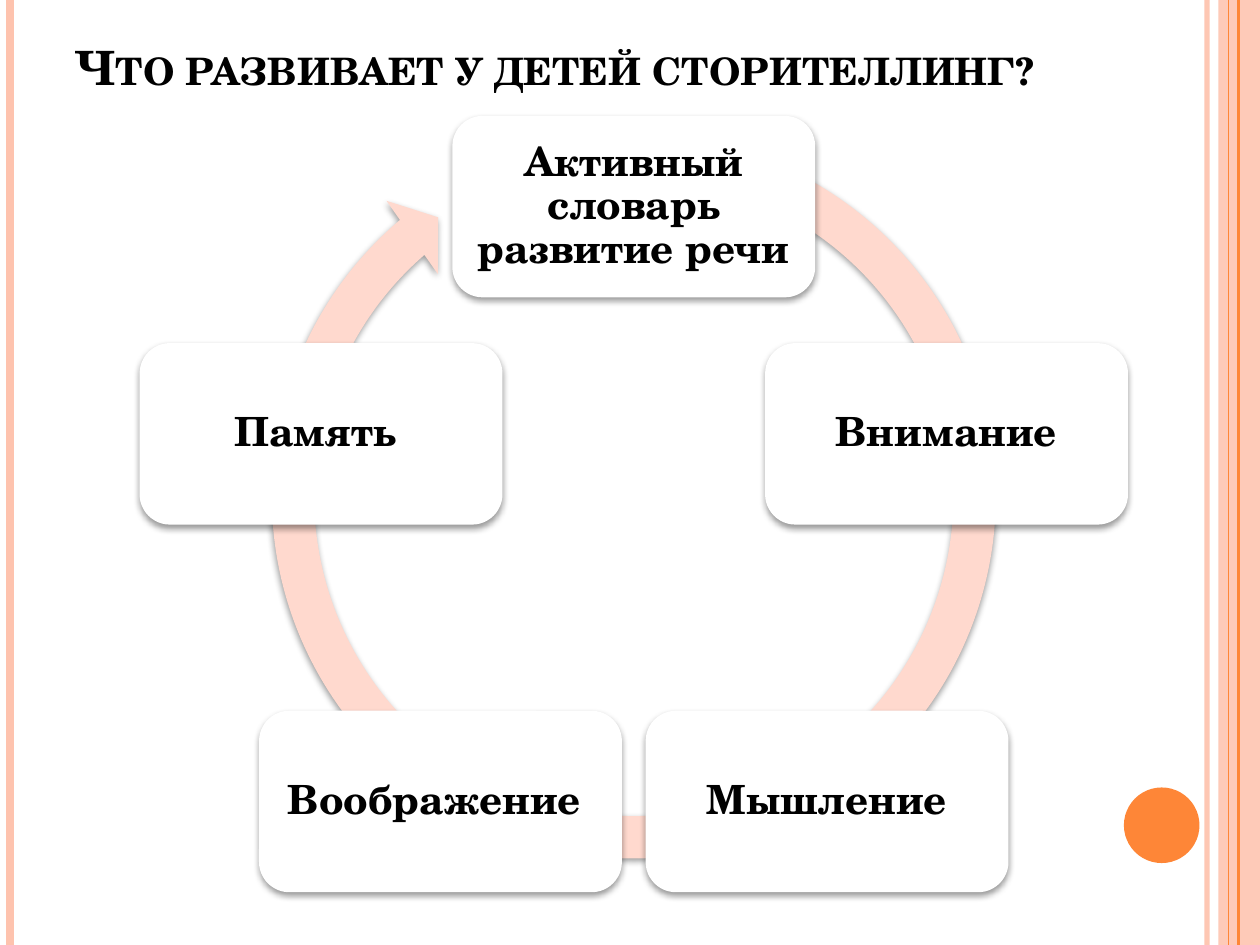
from dataclasses import dataclass
from math import cos, radians, sin

from lxml.etree import SubElement
from pptx import Presentation
from pptx.dml.color import RGBColor
from pptx.enum.shapes import MSO_CONNECTOR as Connector, MSO_SHAPE as Shape
from pptx.enum.text import MSO_ANCHOR as Anchor, PP_ALIGN as Align
from pptx.oxml.ns import qn
from pptx.util import Inches, Pt

FONT = "TeX Gyre Schola"
BLACK, WHITE = "000000", "FFFFFF"
ORANGE, PEACH, PALE_PEACH = "FE8637", "FEC3AE", "FFD9CE"

CENTER_X, CENTER_Y, RADIUS = 5.03, 4.25, 2.61
CARD_WIDTH, CARD_HEIGHT = 2.88, 1.44
ARROW_SIZE = 6.12
ARROW_ADJUSTMENTS = (0.055, 3.307, 137.671, 173.913, 0.058)


@dataclass
class Stripe:
    x: float
    color: str
    weight: float
    opacity: int = 100


STRIPES = [
    Stripe(9.58, PEACH, 3, 93),
    Stripe(0.08, PEACH, 4.5),
    Stripe(9.83, ORANGE, 1.5),
    Stripe(9.75, ORANGE, 0.75),
]
# Clockwise from the top of the cycle
SKILLS = ["Активный словарь развитие речи", "Внимание", "Мышление",
          "Воображение ", "Память "]


def paint(color_owner, color: str, opacity: int = 100) -> None:
    """Fill a shape, line or font with a solid hex colour."""
    color_owner.solid()
    color_owner.fore_color.rgb = RGBColor.from_string(color)
    if opacity < 100:
        node = color_owner._xPr.find(".//" + qn("a:srgbClr"))
        SubElement(node, qn("a:alpha"), val=str(opacity * 1000))


def add_stripe(page, stripe: Stripe) -> None:
    line = page.shapes.add_connector(
        Connector.STRAIGHT, Inches(stripe.x), 0, Inches(stripe.x), Inches(7.5))
    line.line.width = Pt(stripe.weight)
    paint(line.line.fill, stripe.color, stripe.opacity)
    SubElement(line._element.spPr, qn("a:effectLst"))


def add_figure(page, kind, left: float, top: float, width: float,
               height: float, color: str, opacity: int = 100):
    figure = page.shapes.add_shape(
        kind, Inches(left), Inches(top), Inches(width), Inches(height))
    paint(figure.fill, color, opacity)
    figure.line.fill.background()
    figure.shadow.inherit = False
    return figure


def add_soft_shadow(figure) -> None:
    effects = figure._element.spPr.find(qn("a:effectLst"))
    shadow = SubElement(effects, qn("a:outerShdw"), blurRad=str(Pt(4)),
                        dist=str(Pt(2)), dir="5400000", rotWithShape="0")
    color = SubElement(shadow, qn("a:srgbClr"), val=BLACK)
    SubElement(color, qn("a:alpha"), val="40000")


def write(para, text: str, size: float):
    span = para.add_run()
    span.text = text
    span.font.name = FONT
    span.font.size = Pt(size)
    span.font.bold = True
    paint(span.font.fill, BLACK)
    return span


def add_title(page, text: str) -> None:
    title = page.shapes.title
    title.left, title.top = Inches(0.5), Inches(0.3)
    title.width, title.height = Inches(8.17), Inches(0.93)
    frame = title.text_frame
    frame.vertical_anchor = Anchor.TOP
    frame.margin_top = 0
    para = frame.paragraphs[0]
    para.alignment = Align.LEFT
    span = write(para, text, 27)
    span.font._element.set("cap", "small")


def add_cycle_arrow(page) -> None:
    arrow = add_figure(page, Shape.CIRCULAR_ARROW, CENTER_X - ARROW_SIZE / 2,
                       0.88, ARROW_SIZE, ARROW_SIZE, PALE_PEACH)
    for index, value in enumerate(ARROW_ADJUSTMENTS):
        arrow.adjustments[index] = value
    add_soft_shadow(arrow)


def add_card(page, text: str, angle: float) -> None:
    """Place a card on the cycle, angle in degrees clockwise from the top."""
    x = CENTER_X + RADIUS * sin(radians(angle))
    y = CENTER_Y - RADIUS * cos(radians(angle))
    card = add_figure(page, Shape.ROUNDED_RECTANGLE, x - CARD_WIDTH / 2,
                      y - CARD_HEIGHT / 2, CARD_WIDTH, CARD_HEIGHT, WHITE)
    add_soft_shadow(card)
    frame = card.text_frame
    frame.word_wrap = True
    frame.vertical_anchor = Anchor.MIDDLE
    frame.margin_left = frame.margin_right = Inches(0.03)
    frame.margin_top = frame.margin_bottom = Inches(0.03)
    para = frame.paragraphs[0]
    para.alignment = Align.CENTER
    para.line_spacing = 0.9
    write(para, text, 23)


def main() -> None:
    deck = Presentation()
    deck.slide_width, deck.slide_height = Inches(10), Inches(7.5)
    page = deck.slides.add_slide(deck.slide_layouts[5])
    add_figure(page, Shape.RECTANGLE, 9.67, 0, 0.33, 7.5, PEACH, 87)
    for stripe in STRIPES:
        add_stripe(page, stripe)
    add_figure(page, Shape.OVAL, 8.92, 6.25, 0.6, 0.6, ORANGE)
    add_title(page, "Что развивает у детей сторителлинг?")
    add_cycle_arrow(page)
    for index, skill in enumerate(SKILLS):
        add_card(page, skill, index * 360 / len(SKILLS))
    deck.save("out.pptx")


if __name__ == "__main__":
    main()
